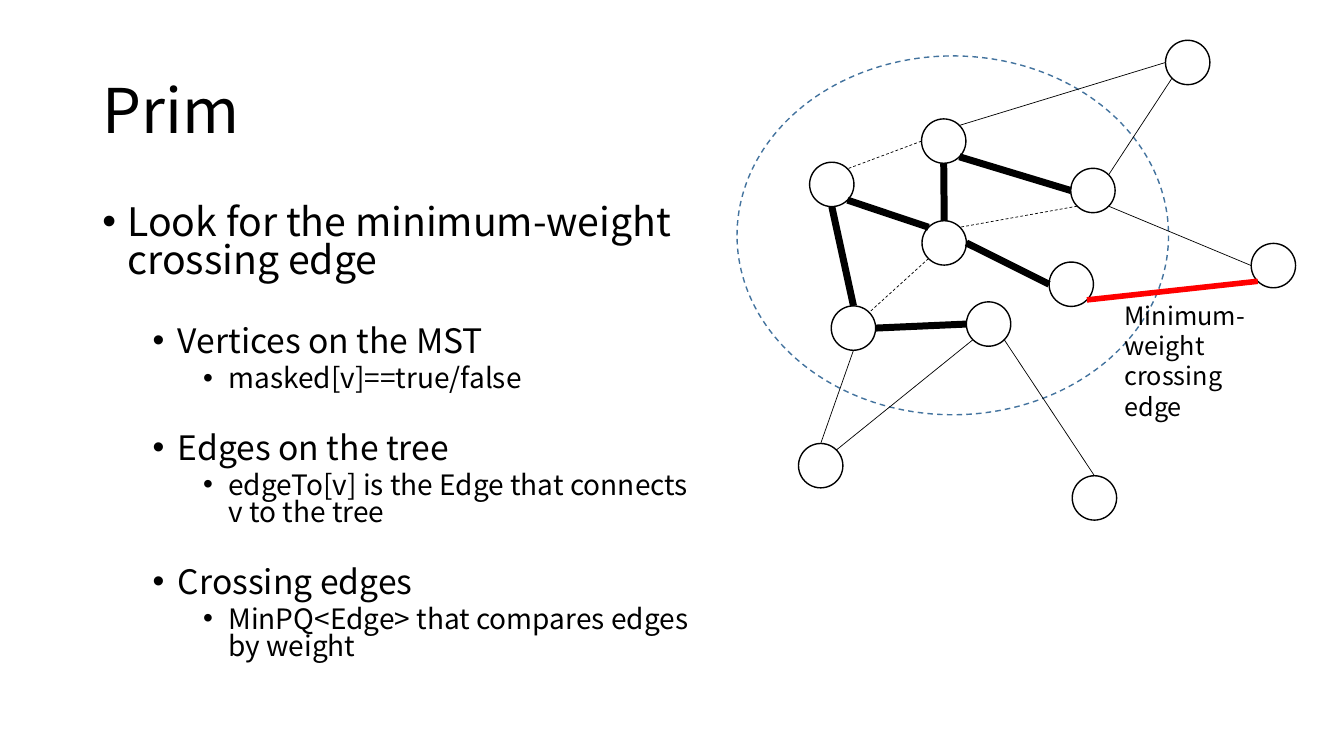
import math
import pptx
import pptx.util
import pptx.dml.color
import pptx.enum.dml
import pptx.enum.shapes
import pptx.enum.text
import pptx.oxml
import pptx.oxml.ns
import lxml.etree

BLACK = pptx.dml.color.RGBColor(0x00, 0x00, 0x00)
WHITE = pptx.dml.color.RGBColor(0xFF, 0xFF, 0xFF)
RED = pptx.dml.color.RGBColor(0xFF, 0x00, 0x00)
BLUE = pptx.dml.color.RGBColor(0x43, 0x73, 0x9E)
FONT = "Noto Sans CJK SC"
DASH = pptx.enum.dml.MSO_LINE.DASH
OVAL = pptx.enum.shapes.MSO_SHAPE.OVAL
STRAIGHT = pptx.enum.shapes.MSO_CONNECTOR.STRAIGHT

presentation = pptx.Presentation()
presentation.slide_width = pptx.util.Inches(13.33)
presentation.slide_height = pptx.util.Inches(7.5)
CELL = presentation.slide_height / 75
slide = presentation.slides.add_slide(presentation.slide_layouts[1])


def cells(*counts):
    return [round(count * CELL) for count in counts]


def format_text(paragraph, size):
    for run in paragraph.runs:
        run.font.name = FONT
        run.font.size = pptx.util.Pt(size)
        run.font.color.rgb = BLACK


title = slide.shapes.title
title.left, title.top, title.width, title.height = cells(9.2, 4, 115, 14.5)
title.text_frame.text = "Prim"
title.text_frame.auto_size = pptx.enum.text.MSO_AUTO_SIZE.NONE
title.text_frame.vertical_anchor = pptx.enum.text.MSO_ANCHOR.MIDDLE
title_paragraph = title.text_frame.paragraphs[0]
title_paragraph.alignment = pptx.enum.text.PP_ALIGN.LEFT
title_paragraph.line_spacing = 0.9
format_text(title_paragraph, 44)

body = slide.placeholders[1]
body.left, body.top, body.width, body.height = cells(9.15, 20, 61.5, 47.6)
body.text_frame.auto_size = pptx.enum.text.MSO_AUTO_SIZE.NONE
LEVEL_SIZES = [28, 24, 20]
points = [
    (0, 0, "Look for the minimum-weight crossing edge"),
    (1, 33, "Vertices on the MST"),
    (2, 5, "masked[v]==true/false"),
    (1, 29, "Edges on the tree"),
    (2, 5, "edgeTo[v] is the Edge that connects v to the tree"),
    (1, 29, "Crossing edges"),
    (2, 5, "MinPQ<Edge> that compares edges by weight"),
]
body.text_frame.text = "\n".join(text for level, space, text in points)
for paragraph, (level, space, text) in zip(body.text_frame.paragraphs, points):
    paragraph.level = level
    paragraph.line_spacing = 0.8
    paragraph.space_before = pptx.util.Pt(space)
    format_text(paragraph, LEVEL_SIZES[level])
    properties = paragraph._p.get_or_add_pPr()
    margin, indent = cells(2.5 + 5 * level, -2.5)
    properties.set("marL", str(margin))
    properties.set("indent", str(indent))
    bullet_font = lxml.etree.SubElement(properties, pptx.oxml.ns.qn("a:buFont"))
    bullet_font.set("typeface", "Arial")
    bullet = lxml.etree.SubElement(properties, pptx.oxml.ns.qn("a:buChar"))
    bullet.set("char", "•")

cut = slide.shapes.add_shape(OVAL, *cells(73.1, 5.55, 42.8, 35.6))
cut.shadow.inherit = False
cut.fill.background()
cut.line.color.rgb = BLUE
cut.line.width = pptx.util.Pt(1)
cut.line.dash_style = DASH

RADIUS = 2.2
vertices = {
    "left": (82.5, 18.3),
    "top": (93.6, 14),
    "hub": (93.65, 24.1),
    "right": (108.4, 18.9),
    "low right": (106.25, 28.2),
    "low left": (84.65, 32.55),
    "bottom": (98.05, 32.15),
    "outer left": (81.4, 46.2),
    "outer bottom": (108.55, 49.4),
    "outer right": (126.3, 26.35),
    "outer top": (117.8, 6.2),
}
for x, y in vertices.values():
    vertex = slide.shapes.add_shape(
        OVAL, *cells(x - RADIUS, y - RADIUS, 2 * RADIUS, 2 * RADIUS)
    )
    vertex.shadow.inherit = False
    vertex.fill.solid()
    vertex.fill.fore_color.rgb = WHITE
    vertex.line.color.rgb = BLACK
    vertex.line.width = pptx.util.Pt(1)

COMPASS = ["E", "SE", "S", "SW", "W", "NW", "N", "NE"]
edge_groups = [
    (BLACK, 5, None, [
        ("left", "S", "low left", "N"),
        ("left", "SE", "hub", "NW"),
        ("top", "S", "hub", "N"),
        ("top", "SE", "right", "W"),
        ("hub", "E", "low right", "W"),
        ("bottom", "W", "low left", "E"),
    ]),
    (BLACK, 0.5, None, [
        ("low left", "S", "outer left", "N"),
        ("bottom", "SW", "outer left", "NE"),
        ("bottom", "SE", "outer bottom", "N"),
        ("outer top", "W", "top", "NE"),
        ("outer top", "SW", "right", "NE"),
        ("outer right", "W", "right", "SE"),
    ]),
    (RED, 4, None, [("outer right", "SW", "low right", "SE")]),
    (BLACK, 0.5, DASH, [
        ("top", "W", "left", "NE"),
        ("hub", "SW", "low left", "NE"),
        ("right", "SW", "hub", "NE"),
    ]),
]
for color, width, dash, edges in edge_groups:
    for start, start_side, end, end_side in edges:
        ends = []
        for name, side in ((start, start_side), (end, end_side)):
            angle = COMPASS.index(side) * math.pi / 4
            x, y = vertices[name]
            ends += cells(x + RADIUS * math.cos(angle), y + RADIUS * math.sin(angle))
        edge = slide.shapes.add_connector(STRAIGHT, *ends)
        edge.line.color.rgb = color
        edge.line.width = pptx.util.Pt(width)
        if dash:
            edge.line.dash_style = dash
        lxml.etree.SubElement(edge._element.spPr, pptx.oxml.ns.qn("a:effectLst"))

label = slide.shapes.add_textbox(*cells(110.55, 29.3, 16.3, 13.1))
label.text_frame.word_wrap = True
label.text_frame.text = "Minimum-weight crossing edge"
format_text(label.text_frame.paragraphs[0], 18)

presentation.save("out.pptx")
